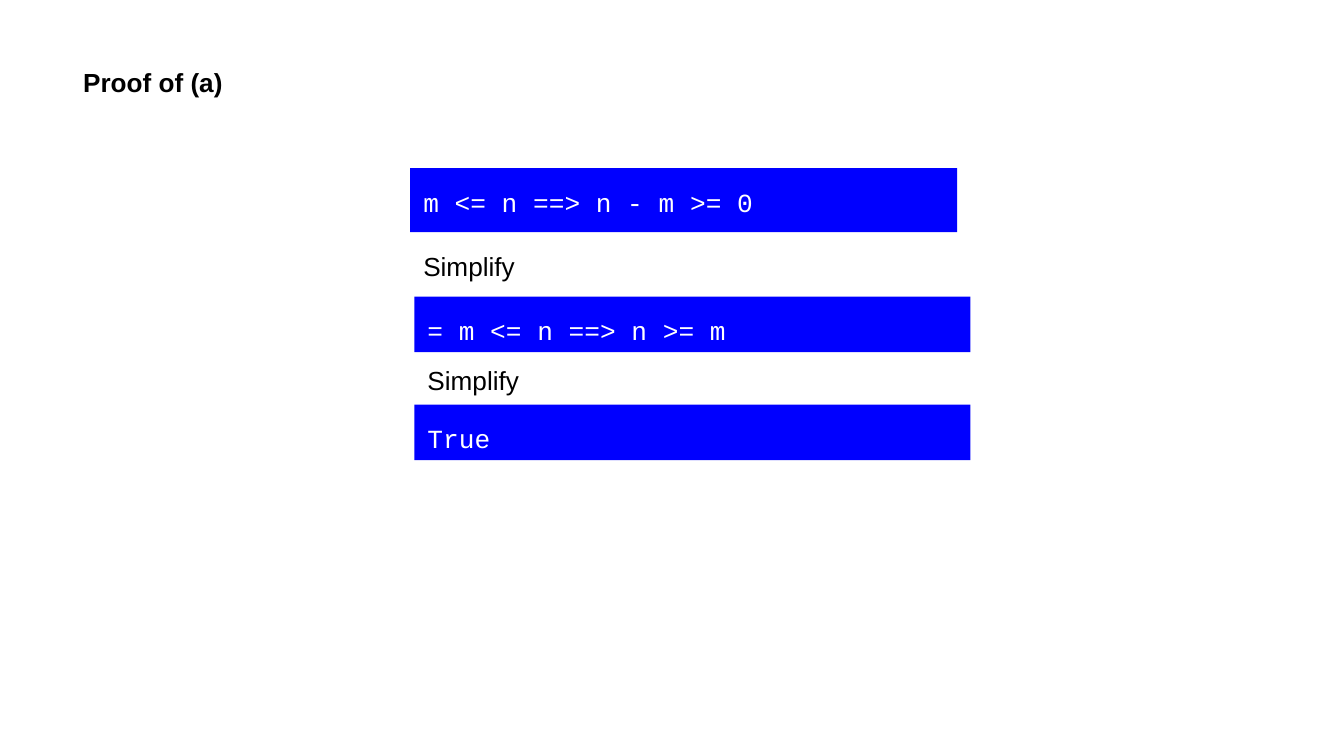
from dataclasses import dataclass

from pptx import Presentation
from pptx.dml.color import RGBColor
from pptx.enum.shapes import MSO_SHAPE
from pptx.enum.text import MSO_ANCHOR, MSO_AUTO_SIZE, PP_ALIGN
from pptx.slide import Slide
from pptx.text.text import TextFrame
from pptx.util import Cm, Pt

COLORS = {"formula_fill": "0000FF", "formula_text": "FFFFFF", "text": "000000"}
INSET = Cm(0.25)


@dataclass(frozen=True)
class ProofLine:
    """One formula bar or one justification; lengths in centimetres."""
    text: str
    left: float
    top: float
    width: float
    height: float
    is_formula: bool = False


PROOF = [
    ProofLine("m <= n ==> n - m >= 0", 7.75, 3.18, 10.34, 1.21, True),
    ProofLine("Simplify", 7.75, 4.39, 10.34, 1.21),
    ProofLine("= m <= n ==> n >= m", 7.83, 5.61, 10.51, 1.05, True),
    ProofLine("Simplify", 7.83, 6.55, 10.34, 1.21),
    ProofLine("True", 7.83, 7.65, 10.51, 1.05, True),
]


def write(frame: TextFrame, text: str, font: str, color: str, bold: bool = False) -> None:
    frame.word_wrap = True
    frame.auto_size = MSO_AUTO_SIZE.NONE
    frame.vertical_anchor = MSO_ANCHOR.TOP
    frame.margin_left = frame.margin_right = INSET
    frame.margin_top = frame.margin_bottom = INSET
    paragraph = frame.paragraphs[0]
    paragraph.alignment = PP_ALIGN.LEFT
    paragraph.line_spacing = 1.15
    paragraph.space_before = Pt(0)
    run = paragraph.add_run()
    run.text = text
    run.font.name = font
    run.font.size = Pt(14)
    run.font.bold = bold
    run.font.color.rgb = RGBColor.from_string(COLORS[color])


def draw_proof_line(slide: Slide, line: ProofLine) -> None:
    place = Cm(line.left), Cm(line.top), Cm(line.width), Cm(line.height)
    if line.is_formula:
        bar = slide.shapes.add_shape(MSO_SHAPE.RECTANGLE, *place)
        bar.shadow.inherit = False
        bar.fill.solid()
        bar.fill.fore_color.rgb = RGBColor.from_string(COLORS["formula_fill"])
        bar.line.fill.background()
        write(bar.text_frame, line.text, "Courier New", "formula_text")
    else:
        reason = slide.shapes.add_textbox(*place)
        write(reason.text_frame, line.text, "Arial", "text")


def main() -> None:
    deck = Presentation()
    deck.slide_width, deck.slide_height = Cm(25.4), Cm(14.29)
    slide = deck.slides.add_slide(deck.slide_layouts.get_by_name("Title Only"))

    # Heading
    heading = slide.shapes.title
    heading.left, heading.top = Cm(1.32), Cm(0.91)
    heading.width, heading.height = Cm(10.34), Cm(1.21)
    write(heading.text_frame, "Proof of (a)", "Arial", "text", bold=True)

    # Proof steps with their justifications
    for line in PROOF:
        draw_proof_line(slide, line)

    deck.save("out.pptx")


if __name__ == "__main__":
    main()
